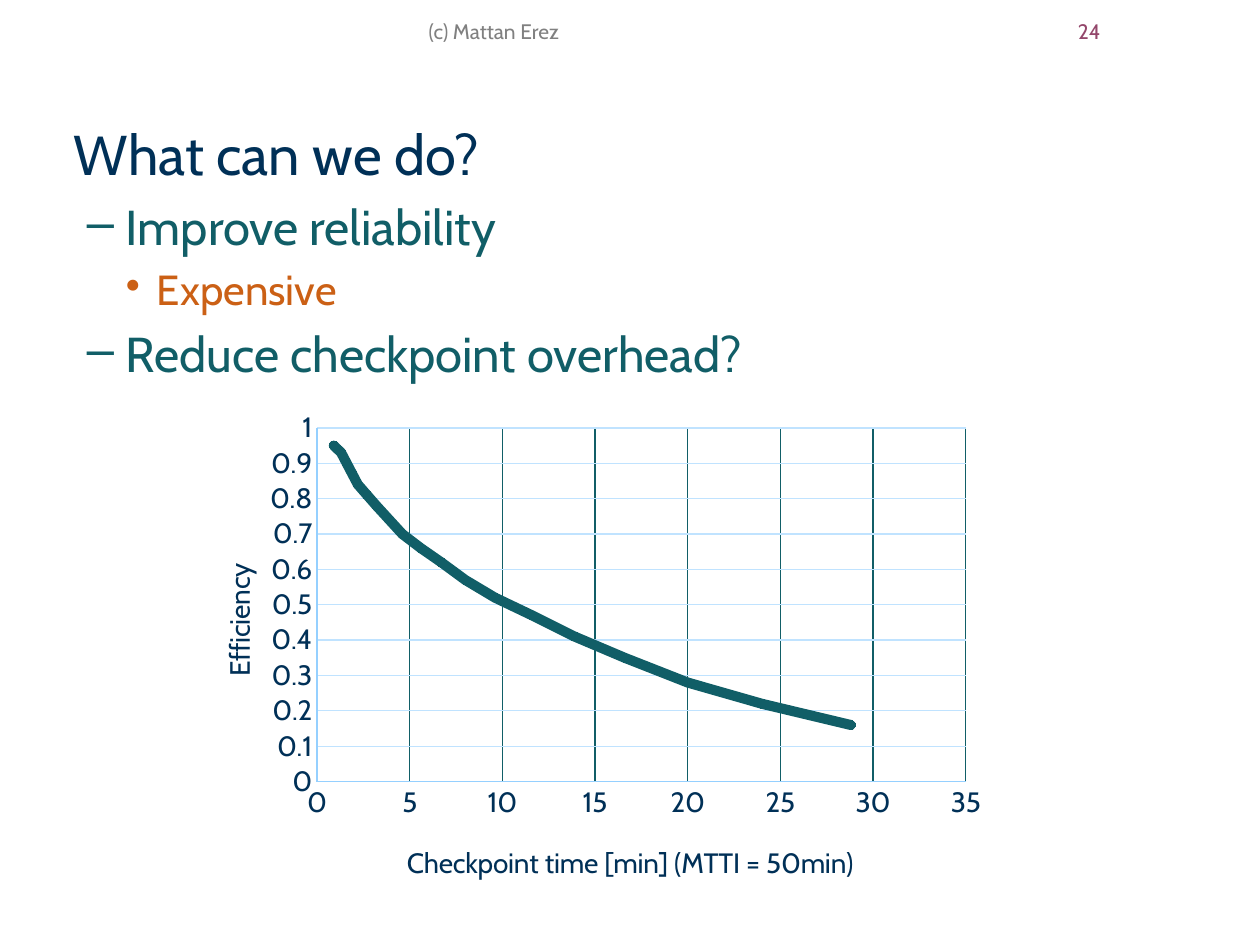
from lxml import etree
from pptx import Presentation
from pptx import util as u
from pptx.chart.data import XyChartData
from pptx.dml.color import RGBColor
from pptx.enum import chart as charts, text
from pptx.oxml.ns import qn

PX = 914400 // 126
FONT = "Cabin"
NAVY = RGBColor(0x00, 0x30, 0x57)
TEAL = RGBColor(0x11, 0x5E, 0x67)
ORANGE = RGBColor(0xCB, 0x60, 0x15)
PLUM = RGBColor(0x94, 0x47, 0x6B)
GRAY = RGBColor(0x80, 0x80, 0x80)
SKY = RGBColor(0x95, 0xD0, 0xFF)
PALE_SKY = RGBColor(0xC0, 0xE3, 0xFF)

OUTLINE = [
    ("What can we do?", 0),
    ("Improve reliability", 1),
    ("Expensive", 2),
    ("Reduce checkpoint overhead?", 1),
]
LEVELS = [
    dict(size=32, color=NAVY, margin=11, indent=0, bullet=None, before=0),
    dict(size=28, color=TEAL, margin=63, indent=-39, bullet="–", before=6),
    dict(size=24, color=ORANGE, margin=94, indent=-31, bullet="•", before=5),
]
HEADERS = [
    ("24", (998, 0, 115, 63), PLUM, text.PP_ALIGN.RIGHT),
    ("(c) Mattan Erez", (116, 0, 756, 63), GRAY, text.PP_ALIGN.CENTER),
]
BODY_BOX = (63, 122, 1176, 270)
CHART_BOX = (181, 402, 815, 499)
PLOT_BOX = (317, 428, 649, 354)
CHECKPOINT_MINUTES = [0.9, 1.1, 1.3, 1.6, 1.9, 2.2, 2.7, 3.2, 3.9, 4.6,
                      5.6, 6.7, 8, 9.6, 11.6, 13.9, 16.6, 20, 24, 28.8]
EFFICIENCY = [0.95, 0.94, 0.93, 0.9, 0.87, 0.84, 0.81, 0.78, 0.74, 0.7,
              0.66, 0.62, 0.57, 0.52, 0.47, 0.41, 0.35, 0.28, 0.22, 0.16]
AXES = {
    "category_axis": dict(title="Checkpoint time [min] (MTTI = 50min)",
                          at=(402, 839), top=35, step=5, grid=TEAL),
    "value_axis": dict(title="Efficiency", at=(215, 558), top=1, step=0.1,
                       grid=PALE_SKY),
}


def scaled(numbers):
    return [number * PX for number in numbers]


def set_format(target, **values):
    for name, value in values.items():
        setattr(target, name, value)


def set_font(font, size, color):
    set_format(font, size=u.Pt(size), name=FONT, bold=False)
    font.color.rgb = color


def set_line(line, color, width):
    line.color.rgb = color
    line.width = u.Pt(width)


def add_box(page, place, anchor, **margins):
    frame = page.shapes.add_textbox(*scaled(place)).text_frame
    set_format(frame, word_wrap=True, vertical_anchor=anchor, **margins)
    return frame


def add_headers(page):
    for words, place, color, align in HEADERS:
        frame = add_box(page, place, text.MSO_ANCHOR.MIDDLE)
        para = frame.paragraphs[0]
        para.alignment = align
        span = para.add_run()
        span.text = words
        set_font(span.font, 12, color)


def add_outline(page):
    frame = add_box(page, BODY_BOX, text.MSO_ANCHOR.TOP, margin_left=0,
                    margin_top=0, margin_right=0, margin_bottom=0)
    for number, (words, depth) in enumerate(OUTLINE):
        level = LEVELS[depth]
        para = frame.add_paragraph() if number else frame.paragraphs[0]
        set_format(para, level=depth, line_spacing=0.99,
                   space_before=u.Pt(level["before"]))
        props = para._p.get_or_add_pPr()
        props.set("marL", str(level["margin"] * PX))
        props.set("indent", str(level["indent"] * PX))
        if level["bullet"]:
            bullet_color = etree.SubElement(props, qn("a:buClr"))
            etree.SubElement(bullet_color, qn("a:srgbClr"), val=str(level["color"]))
            etree.SubElement(props, qn("a:buChar"), char=level["bullet"])
        span = para.add_run()
        span.text = words
        set_font(span.font, level["size"], level["color"])


def set_layout(parent, index, place, inner=False):
    for old in parent.findall(qn("c:layout")):
        parent.remove(old)
    layout = etree.Element(qn("c:layout"))
    manual = etree.SubElement(layout, qn("c:manualLayout"))
    left, top, width, height = CHART_BOX
    values = {"xMode": "edge", "yMode": "edge",
              "x": round((place[0] - left) / width, 3),
              "y": round((place[1] - top) / height, 3)}
    if inner:
        values = {"layoutTarget": "inner", **values,
                  "w": round(place[2] / width, 3),
                  "h": round(place[3] / height, 3)}
    for name, value in values.items():
        etree.SubElement(manual, qn("c:" + name), val=str(value))
    parent.insert(index, layout)


def add_efficiency_chart(page):
    data = XyChartData()
    points = data.add_series("Efficiency")
    for minutes, share in zip(CHECKPOINT_MINUTES, EFFICIENCY):
        points.add_data_point(minutes, share)
    chart = page.shapes.add_chart(charts.XL_CHART_TYPE.XY_SCATTER_SMOOTH,
                                  *scaled(CHART_BOX), data).chart
    set_format(chart, has_legend=False, has_title=False)
    set_font(chart.font, 16, NAVY)
    chart.plots[0].vary_by_categories = False
    set_layout(chart._chartSpace.chart.plotArea, 0, PLOT_BOX, inner=True)

    for name, look in AXES.items():
        axis = getattr(chart, name)
        set_format(axis, minimum_scale=0, maximum_scale=look["top"],
                   major_unit=look["step"], has_major_gridlines=True,
                   major_tick_mark=charts.XL_TICK_MARK.NONE,
                   minor_tick_mark=charts.XL_TICK_MARK.NONE)
        set_format(axis.tick_labels, number_format="General",
                   number_format_is_linked=False)
        set_font(axis.tick_labels.font, 16, NAVY)
        set_line(axis.format.line, SKY, 0.75)
        set_line(axis.major_gridlines.format.line, look["grid"], 0.75)
        span = axis.axis_title.text_frame.paragraphs[0].add_run()
        span.text = look["title"]
        set_font(span.font, 16, NAVY)
        set_layout(axis.axis_title._element, 1, look["at"])

    curve = chart.plots[0].series[0]
    curve.smooth = True
    set_line(curve.format.line, TEAL, 5.75)
    curve.format.line._ln.set("cap", "rnd")
    set_format(curve.marker, style=charts.XL_MARKER_STYLE.CIRCLE, size=5)
    curve.marker.format.fill.solid()
    curve.marker.format.fill.fore_color.rgb = TEAL
    set_line(curve.marker.format.line, TEAL, 0.75)


def main():
    deck = Presentation()
    set_format(deck, slide_width=u.Inches(10), slide_height=u.Inches(7.5))
    page = deck.slides.add_slide(deck.slide_layouts[6])
    add_outline(page)
    add_headers(page)
    add_efficiency_chart(page)
    deck.save("out.pptx")


if __name__ == "__main__":
    main()
